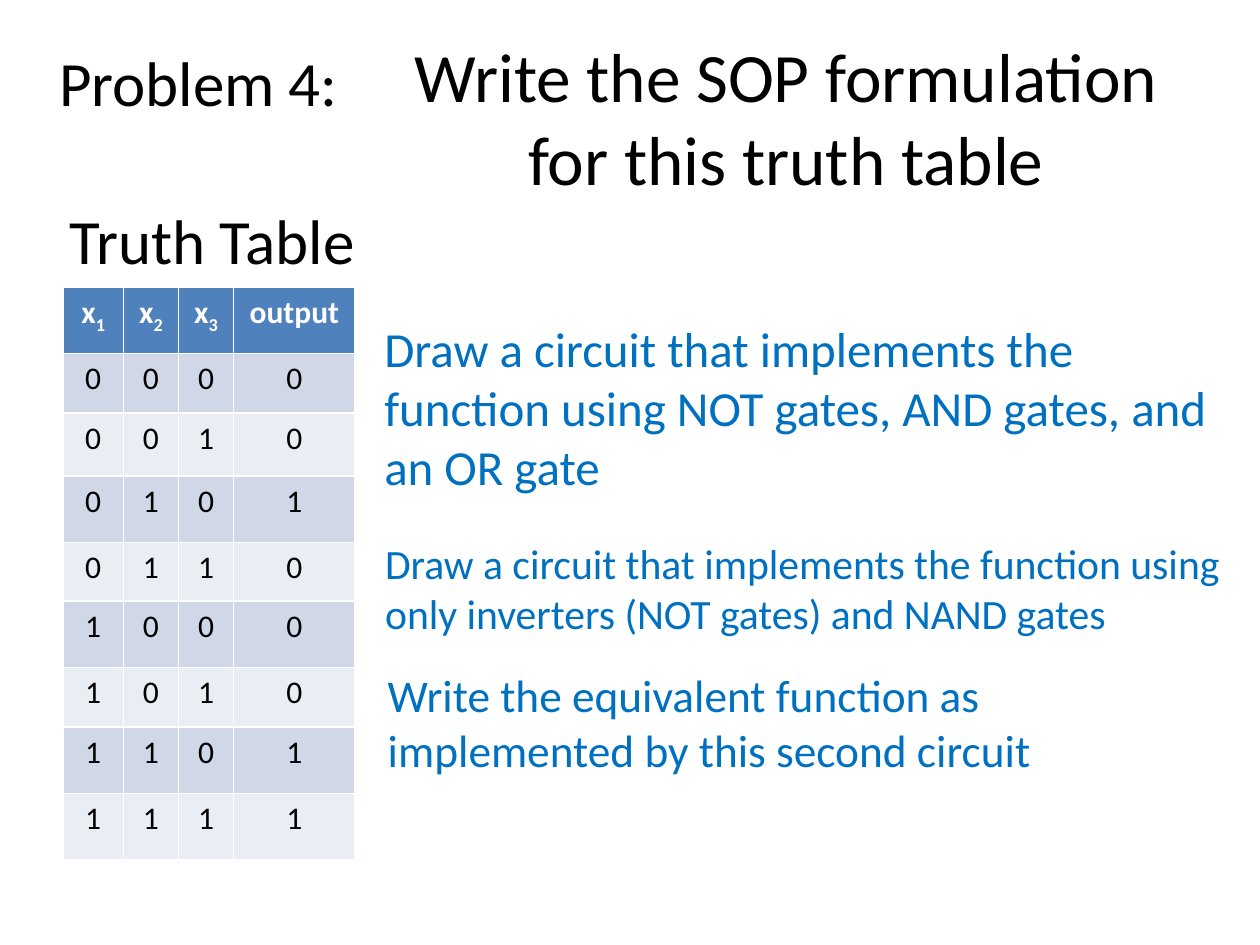
from itertools import product

from pptx import Presentation
from pptx.dml.color import RGBColor
from pptx.enum.text import MSO_ANCHOR, MSO_AUTO_SIZE, PP_ALIGN
from pptx.util import Pt

CENTER = PP_ALIGN.CENTER
MIDDLE = MSO_ANCHOR.MIDDLE
NO_FIT = MSO_AUTO_SIZE.NONE
GROW = MSO_AUTO_SIZE.SHAPE_TO_FIT_TEXT

BLACK, WHITE, BLUE = "000000", "FFFFFF", "0070C0"
HEAD, BANDS = "4F81BD", ("D0D8E8", "E9EDF4")

COLS = (34.5, 31.5, 31.5, 69.5)
ROWS = (38, 34, 36, 38, 33.5, 38, 34, 38, 38)
OUTPUT = "00100011"

TASKS = (
    (212.5, 178.5, 109.5, 28, "Draw a circuit that implements the function "
     "using NOT gates, AND gates, and an OR gate"),
    (213, 304, 66, 23.8, "Draw a circuit that implements the function "
     "using only inverters (NOT gates) and NAND gates"),
    (214.5, 378, 66, 25.9, "Write the equivalent function as "
     "implemented by this second circuit"),
)


def rgb(code):
    return RGBColor.from_string(code)


class Deck:
    """Holds the font and the current slide."""

    def __init__(self, slide, face="Calibri"):
        self.slide = slide
        self.face = face

    def style(self, para, size, color, bold=False):
        font = para.font
        font.name, font.size, font.bold = self.face, Pt(size), bold
        font.color.rgb = rgb(color)

    def title(self, text, left, top, width, height, size):
        shape = self.slide.shapes.title
        shape.left, shape.top = Pt(left), Pt(top)
        shape.width, shape.height = Pt(width), Pt(height)
        frame = shape.text_frame
        frame.text = text
        frame.auto_size, frame.vertical_anchor = NO_FIT, MIDDLE
        para = frame.paragraphs[0]
        para.alignment = CENTER
        self.style(para, size, BLACK)

    def text(self, text, left, top, width, height, size,
             color=BLACK, fit=NO_FIT, before=0):
        box = self.slide.shapes.add_textbox(
            Pt(left), Pt(top), Pt(width), Pt(height))
        frame = box.text_frame
        frame.text = text
        frame.word_wrap, frame.auto_size = True, fit
        para = frame.paragraphs[0]
        para.space_before = Pt(before)
        self.style(para, size, color)

    def cell(self, cell, text, fill, color, bold=False, sub=""):
        """Fill one cell; sub is set as a subscript after the text."""
        cell.fill.solid()
        cell.fill.fore_color.rgb = rgb(fill)
        para = cell.text_frame.paragraphs[0]
        para.alignment = CENTER
        self.style(para, 18, color, bold)
        para.add_run().text = text
        if sub:
            run = para.add_run()
            run.text = sub
            run.font._element.set("baseline", "-25000")

    def table(self, left, top):
        grid = self.slide.shapes.add_table(
            len(ROWS), len(COLS), Pt(left), Pt(top),
            Pt(sum(COLS)), Pt(sum(ROWS))).table
        for col, width in zip(grid.columns, COLS):
            col.width = Pt(width)
        for row, height in zip(grid.rows, ROWS):
            row.height = Pt(height)
        heads = [("x", "1"), ("x", "2"), ("x", "3"), ("output", "")]
        for c, (name, sub) in enumerate(heads):
            self.cell(grid.cell(0, c), name, HEAD, WHITE, True, sub)
        for r, (bits, out) in enumerate(zip(product("01", repeat=3), OUTPUT)):
            for c, bit in enumerate((*bits, out)):
                self.cell(grid.cell(r + 1, c), bit, BANDS[r % 2], BLACK)


def main():
    prs = Presentation()
    prs.slide_width, prs.slide_height = Pt(720), Pt(540)
    deck = Deck(prs.slides.add_slide(prs.slide_layouts[5]))
    deck.title("Write the SOP formulation for this truth table",
               214.5, 21.5, 469.5, 90, 39.6)
    deck.text(" Truth Table", 24.5, 111.5, 189.5, 51, 36, fit=GROW)
    deck.table(36, 164)
    deck.text(" Problem 4:", 18.5, 21.5, 184.5, 51, 36, fit=GROW)
    for left, top, height, size, text in TASKS:
        deck.text(text, left, top, 493, height, size, BLUE, before=size / 5)
    prs.save("out.pptx")


if __name__ == "__main__":
    main()
